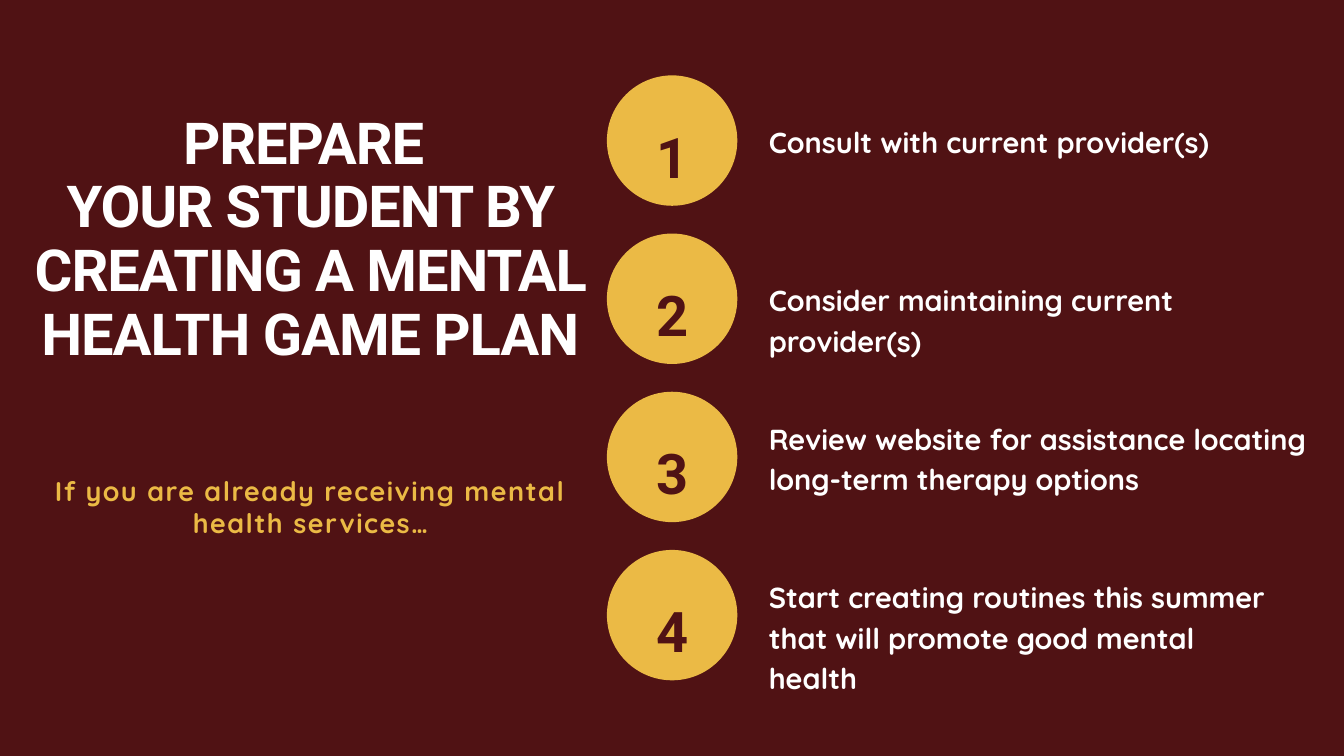
from dataclasses import dataclass

import pptx
import pptx.dml.color
import pptx.enum.shapes
import pptx.enum.text
import pptx.util
from pptx.util import Cm

ALIGN = pptx.enum.text.PP_ALIGN
ANCHOR = pptx.enum.text.MSO_ANCHOR


@dataclass(frozen=True)
class Theme:
    maroon: str = "501214"
    gold: str = "EBBA45"
    white: str = "FFFFFF"
    heading_font: str = "Roboto"
    body_font: str = "Quicksand"
    title_size: float = 62
    number_size: float = 60
    step_size: float = 31
    subtitle_size: float = 29


THEME = Theme()

# Step text, lines its box is sized for, box width in cm
STEPS = [
    ("Consult with current provider(s)", 1, 19.0),
    ("Consider maintaining current provider(s)", 1, 20.7),
    ("Review website for assistance locating long-term therapy options", 2, 20.7),
    ("Start creating routines this summer that will promote good mental health", 2, 19.69),
]

# Step column, in cm
CIRCLE_LEFT, CIRCLE_TOP, CIRCLE_SIZE = 22.94, 2.85, 4.93
STEP_PITCH = 5.98
STEP_LEFT, STEP_LINE_HEIGHT, STEP_RAISE = 29.06, 1.48, 0.08


def color(value):
    return pptx.dml.color.RGBColor.from_string(value)


def write_text(shape, text, *, font, size, fill, line, align=ALIGN.LEFT,
               anchor=ANCHOR.TOP, tracking=0, inset=0):
    """Fill a shape with text, one paragraph for each line of the string."""
    frame = shape.text_frame
    frame.word_wrap = True
    frame.auto_size = pptx.enum.text.MSO_AUTO_SIZE.NONE
    frame.vertical_anchor = anchor
    frame.margin_left = frame.margin_right = Cm(inset)
    frame.margin_top = frame.margin_bottom = Cm(inset)
    frame.text = text
    for paragraph in frame.paragraphs:
        paragraph.alignment = align
        paragraph.line_spacing = pptx.util.Pt(line)
        for run in paragraph.runs:
            run.font.name = font
            run.font.size = pptx.util.Pt(size)
            run.font.bold = True
            run.font.color.rgb = color(fill)
            if tracking:
                run.font._element.set("spc", str(round(tracking * 100)))


def add_text(shapes, text, left, top, width, height, **text_format):
    box = shapes.add_textbox(Cm(left), Cm(top), Cm(width), Cm(height))
    write_text(box, text, **text_format)


def add_title(slide, text):
    title = slide.shapes.title
    title.left, title.top = Cm(1.14), Cm(4.24)
    title.width, title.height = Cm(21.18), Cm(12.47)
    write_text(title, text, font=THEME.heading_font, size=THEME.title_size,
               fill=THEME.white, line=68.2, align=ALIGN.CENTER, tracking=-1.2)


def add_number(slide, number, top):
    """Group a gold circle with its number."""
    group = slide.shapes.add_group_shape()
    circle = group.shapes.add_shape(
        pptx.enum.shapes.MSO_SHAPE.OVAL,
        Cm(CIRCLE_LEFT), Cm(top), Cm(CIRCLE_SIZE), Cm(CIRCLE_SIZE))
    circle.shadow.inherit = False
    circle.fill.solid()
    circle.fill.fore_color.rgb = color(THEME.gold)
    circle.line.fill.background()
    add_text(group.shapes, str(number), CIRCLE_LEFT + 0.47, top + 0.12, 3.99, 4.34,
             font=THEME.heading_font, size=THEME.number_size, fill=THEME.maroon,
             line=60, align=ALIGN.CENTER, anchor=ANCHOR.BOTTOM,
             tracking=-1.2, inset=0.15)


def add_step(slide, number, text, lines, width):
    top = CIRCLE_TOP + (number - 1) * STEP_PITCH
    add_number(slide, number, top)
    # The text box is centred on the circle, slightly raised
    height = lines * STEP_LINE_HEIGHT
    text_top = top + (CIRCLE_SIZE - height) / 2 - STEP_RAISE
    add_text(slide.shapes, text, STEP_LEFT, text_top, width, height,
             font=THEME.body_font, size=THEME.step_size, fill=THEME.white, line=43.4)


def main():
    presentation = pptx.Presentation()
    presentation.slide_width, presentation.slide_height = Cm(50.8), Cm(28.58)
    slide = presentation.slides.add_slide(presentation.slide_layouts[5])
    slide.background.fill.solid()
    slide.background.fill.fore_color.rgb = color(THEME.maroon)

    # Left side: title and subtitle
    add_title(slide, "PREPARE \nYOUR STUDENT BY CREATING A MENTAL HEALTH GAME PLAN")
    add_text(slide.shapes, "If you are already receiving mental health services…",
             1.85, 17.96, 19.79, 3.56, font=THEME.body_font,
             size=THEME.subtitle_size, fill=THEME.gold, line=34.2,
             align=ALIGN.CENTER, tracking=1.6)

    # Right side: numbered steps
    for number, (text, lines, width) in enumerate(STEPS, start=1):
        add_step(slide, number, text, lines, width)

    presentation.save("out.pptx")


if __name__ == "__main__":
    main()
